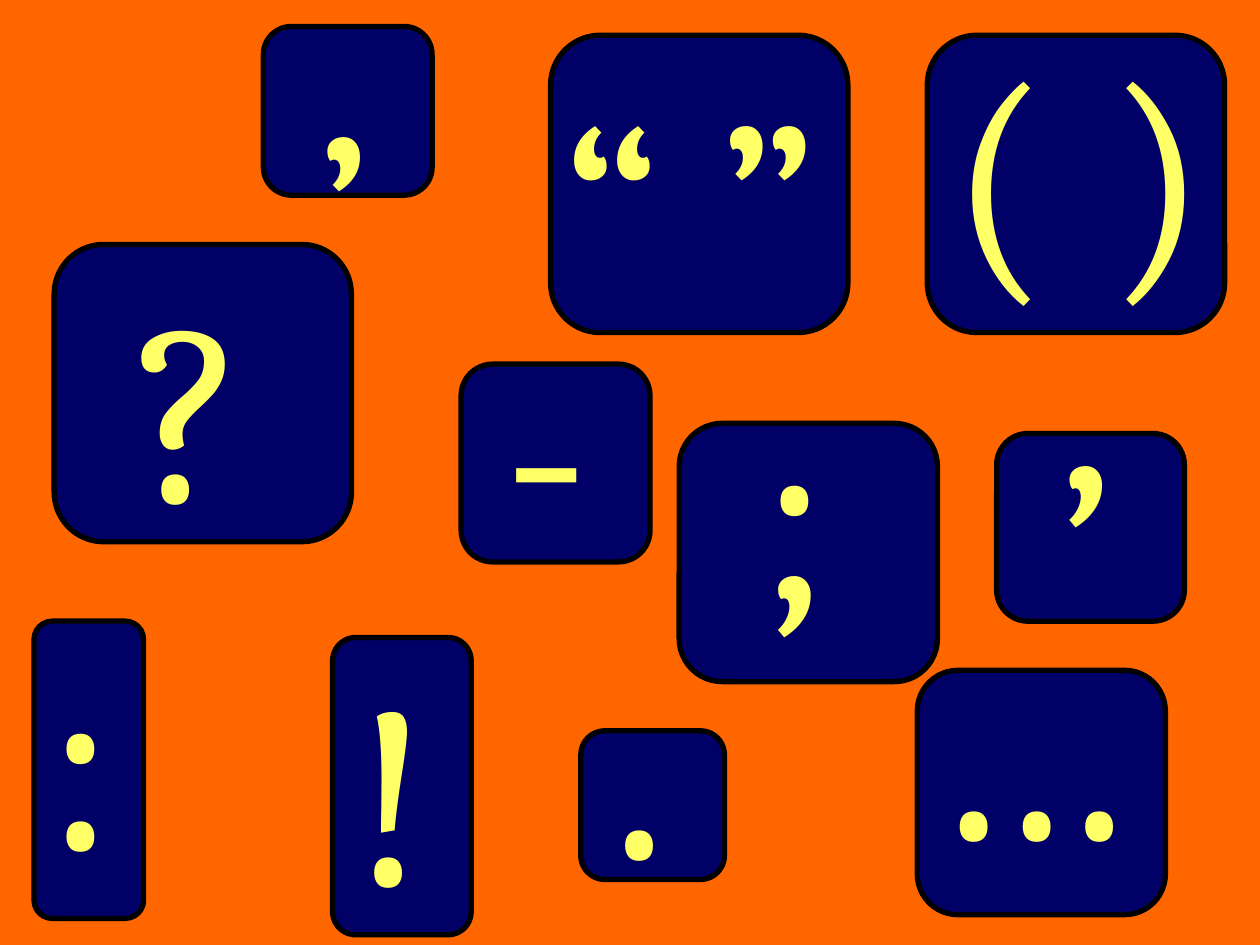
from typing import NamedTuple

from pptx import Presentation
from pptx.dml.color import RGBColor
from pptx.enum.shapes import MSO_SHAPE as Shape
from pptx.enum.text import MSO_AUTO_SIZE as Fit
from pptx.util import Inches, Pt

ORANGE = RGBColor(0xFF, 0x66, 0x00)
NAVY = RGBColor(0x00, 0x00, 0x66)
BLACK = RGBColor(0x00, 0x00, 0x00)
YELLOW = RGBColor(0xFF, 0xFF, 0x66)

COLS, ROWS = 100, 75
CELL = Inches(10) / COLS
MARK_HIGH = 26


class Box(NamedTuple):
    """A place on the grid, in columns and rows."""
    col: float
    row: float
    wide: float
    high: float

    def place(self) -> list[int]:
        return [round(n * CELL) for n in self]


class Card(NamedTuple):
    """A tile and the punctuation mark set over it."""
    mark: str
    tile: Box
    col: float
    row: float
    wide: float = 14.9


CARDS = [
    Card("!", Box(26.4, 50.6, 11, 23.6), 27.2, 49),
    Card(".", Box(46.1, 58, 11.4, 11.8), 47.6, 46.9),
    Card("’", Box(20.9, 2.1, 13.4, 13.4), 24, 3.6),
    Card(",", Box(79.1, 34.4, 14.9, 14.9), 83.1, 17.8),
    Card("“ ”", Box(43.7, 2.8, 23.6, 23.6), 43.7, 2.8, 26),
    Card("…", Box(72.8, 53.2, 19.7, 19.4), 72.8, 45.4, 18.1),
    Card("( )", Box(73.6, 2.8, 23.6, 23.6), 74.4, 0, 25.6),
    Card(":", Box(2.7, 49.3, 8.7, 23.6), 2.7, 46.2),
    Card(";", Box(53.9, 33.6, 20.5, 20.5), 59.4, 26.5),
    Card("-", Box(36.6, 28.9, 15, 15.7), 39, 21.8),
    Card("?", Box(4.3, 19.4, 23.6, 23.6), 9.8, 18.6),
]


def draw_tile(shapes, box: Box) -> None:
    tile = shapes.add_shape(Shape.ROUNDED_RECTANGLE, *box.place())
    tile.shadow.inherit = False
    tile.fill.solid()
    tile.fill.fore_color.rgb = NAVY
    tile.line.color.rgb = BLACK
    tile.line.width = Pt(3)


def draw_mark(shapes, text: str, box: Box) -> None:
    frame = shapes.add_textbox(*box.place()).text_frame
    frame.word_wrap = True
    frame.auto_size = Fit.SHAPE_TO_FIT_TEXT
    line = frame.paragraphs[0]
    line.text = text
    line.font.name = "Cambria"
    line.font.size = Pt(150)
    line.font.color.rgb = YELLOW


def draw_card(slide, card: Card) -> None:
    shapes = slide.shapes.add_group_shape().shapes
    draw_tile(shapes, card.tile)
    draw_mark(shapes, card.mark, Box(card.col, card.row, card.wide, MARK_HIGH))


def main() -> None:
    deck = Presentation()
    deck.slide_width = round(COLS * CELL)
    deck.slide_height = round(ROWS * CELL)
    slide = deck.slides.add_slide(deck.slide_layouts[6])
    slide.background.fill.solid()
    slide.background.fill.fore_color.rgb = ORANGE
    for card in CARDS:
        draw_card(slide, card)
    deck.save("out.pptx")


if __name__ == "__main__":
    main()
